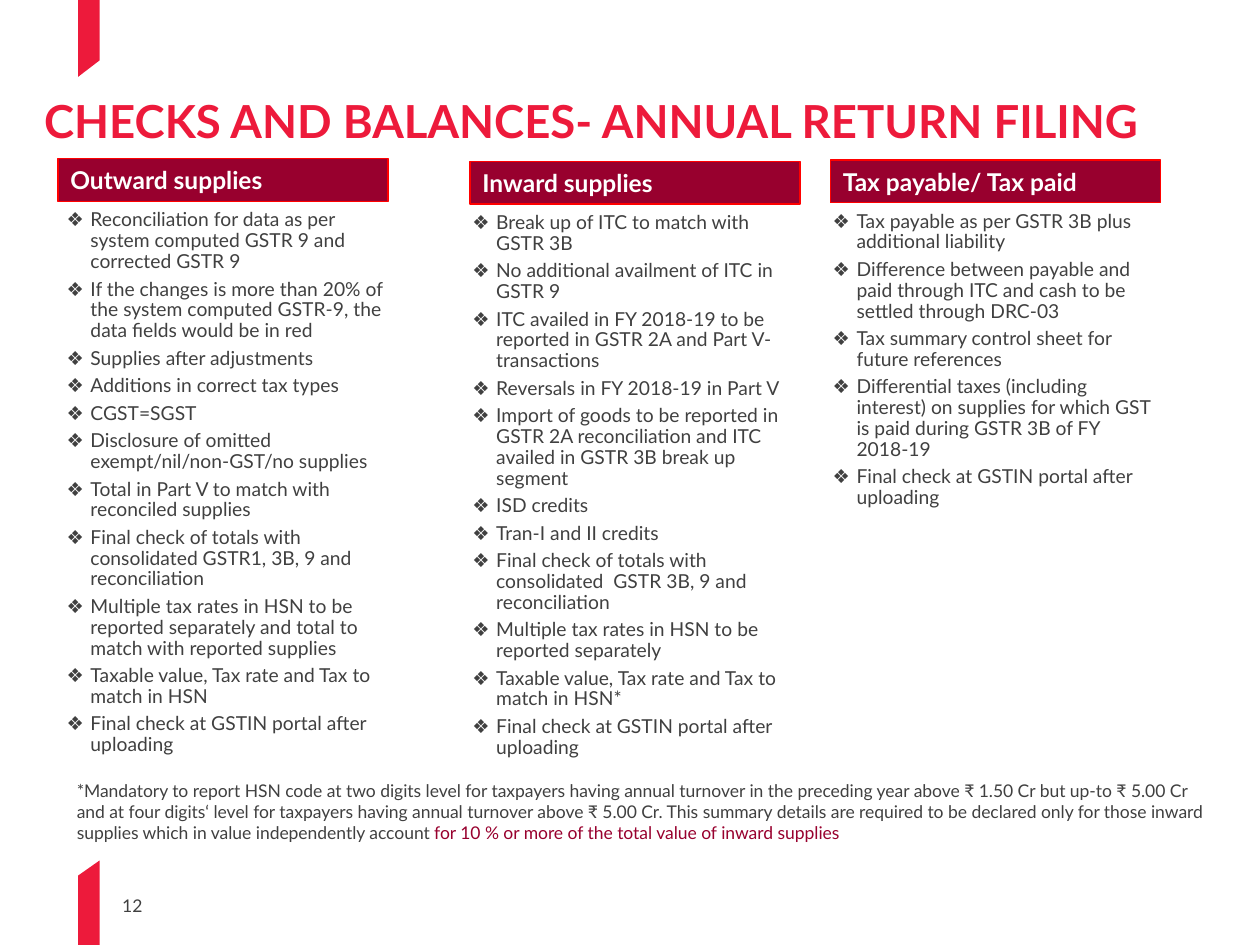
"""Build the annual return filing checklist slide."""
from lxml import etree
from pptx import Presentation
from pptx import util as u
from pptx.dml.color import RGBColor
from pptx.enum import shapes, text
from pptx.oxml.ns import qn

RED, WINE, GREY, WHITE = "ED1A3B", "98002E", "404040", "FFFFFF"
TITLE = "CHECKS AND BALANCES- ANNUAL RETURN FILING"
FINAL_CHECK = "Final check at GSTIN portal after uploading"

COLUMNS = [
    {"heading": "Outward supplies", "header_at": (0.46, 1.26), "list_left": 0.43, "list_height": 4.5,
     "checks": [
         "Reconciliation for data as per system computed GSTR 9 and corrected GSTR 9",
         "If the changes is more than 20% of the system computed GSTR-9, the data fields would be in red",
         "Supplies after adjustments",
         "Additions in correct tax types",
         "CGST=SGST",
         "Disclosure of omitted exempt/nil/non-GST/no supplies",
         "Total in Part V to match with reconciled supplies",
         "Final check of totals with consolidated GSTR1, 3B, 9 and reconciliation",
         "Multiple tax rates in HSN to be reported separately and total to match with reported supplies",
         "Taxable value, Tax rate and Tax to match in HSN",
         FINAL_CHECK]},
    {"heading": "Inward supplies", "header_at": (3.73, 1.28), "list_left": 3.65, "list_height": 4.5,
     "checks": [
         "Break up of ITC to match with GSTR 3B",
         "No additional availment of ITC in GSTR 9",
         "ITC availed in FY 2018-19 to be reported in GSTR 2A and Part V- transactions",
         "Reversals in FY 2018-19 in Part V",
         "Import of goods to be reported in GSTR 2A reconciliation and ITC availed in GSTR 3B "
         "break up segment",
         "ISD credits",
         "Tran-I and II credits",
         "Final check of totals with consolidated  GSTR 3B, 9 and reconciliation",
         "Multiple tax rates in HSN to be reported separately",
         "Taxable value, Tax rate and Tax to match in HSN*",
         FINAL_CHECK]},
    {"heading": "Tax payable/ Tax paid", "header_at": (6.59, 1.27), "list_left": 6.51, "list_height": 2.5,
     "checks": [
         "Tax payable as per GSTR 3B plus additional liability",
         "Difference between payable and paid through ITC and cash to be settled through DRC-03",
         "Tax summary control sheet for future references",
         "Differential taxes (including interest) on supplies for which GST is paid during GSTR 3B "
         "of FY 2018-19",
         FINAL_CHECK]},
]

FOOTNOTE = [
    ("*Mandatory to report HSN code at two digits level for taxpayers having annual turnover in the "
     "preceding year above ₹ 1.50 Cr but up-to ₹ 5.00 Cr and at four digits‘ level for taxpayers having "
     "annual turnover above ₹ 5.00 Cr. This summary details are required to be declared only for those "
     "inward supplies which in value independently account ", GREY),
    ("for 10 % or more of the total value of inward supplies", WINE),
]

RIBBONS = [
    [(0.79, 0.48), (0.79, 0), (0.62, 0), (0.62, 0.61)],
    [(0.62, 6.95), (0.62, 7.5), (0.79, 7.5), (0.79, 6.83)],
]


def rgb(value):
    return RGBColor.from_string(value)


def paint(shape, fill, line=None):
    shape.shadow.inherit = False
    shape.fill.solid()
    shape.fill.fore_color.rgb = rgb(fill)
    if line:
        shape.line.color.rgb = rgb(line)
        shape.line.width = u.Pt(0.75)
    else:
        shape.line.fill.background()


def add_bullet(para, indent=0.19):
    props = para._p.get_or_add_pPr()
    props.set("marL", str(u.Inches(indent)))
    props.set("indent", str(-u.Inches(indent)))
    etree.SubElement(props, qn("a:buFont")).set("typeface", "Lato")
    etree.SubElement(props, qn("a:buChar")).set("char", "❖")


def write(shape, paragraphs, size, color=GREY, bold=False, inset=True, bullets=False,
          spacing=None, after=None, anchor=text.MSO_ANCHOR.TOP):
    """Fill a shape with paragraphs, each a string or a list of (text, color) spans."""
    frame = shape.text_frame
    frame.word_wrap = True
    frame.auto_size = text.MSO_AUTO_SIZE.NONE
    frame.vertical_anchor = anchor
    if not inset:
        frame.margin_left = frame.margin_right = frame.margin_top = frame.margin_bottom = 0
    for index, content in enumerate(paragraphs):
        para = frame.add_paragraph() if index else frame.paragraphs[0]
        para.alignment = text.PP_ALIGN.LEFT
        if spacing:
            para.line_spacing = spacing
        if after:
            para.space_after = u.Pt(after)
        if bullets:
            add_bullet(para)
        spans = [(content, color)] if isinstance(content, str) else content
        for words, span_color in spans:
            span = para.add_run()
            span.text = words
            span.font.name = "Lato"
            span.font.size = u.Pt(size)
            span.font.bold = bold
            span.font.color.rgb = rgb(span_color)


def add_text(page, bounds, paragraphs, **style):
    box = page.shapes.add_textbox(*map(u.Inches, bounds))
    write(box, paragraphs, **style)


def add_ribbon(page, corners):
    start, *rest = [tuple(map(u.Inches, corner)) for corner in corners]
    builder = page.shapes.build_freeform(*start)
    builder.add_line_segments(rest, close=True)
    paint(builder.convert_to_shape(), RED)


def add_column(page, column):
    left, top = column["header_at"]
    header = page.shapes.add_shape(shapes.MSO_SHAPE.RECTANGLE,
                                   *map(u.Inches, (left, top, 2.62, 0.34)))
    paint(header, WINE, "FF0000")
    write(header, [column["heading"]], size=14, color=WHITE, bold=True,
          anchor=text.MSO_ANCHOR.MIDDLE)
    add_text(page, (column["list_left"], top + 0.36, 2.73, column["list_height"]),
             column["checks"], size=11, bullets=True, spacing=0.9, after=3.85)


def main():
    deck = Presentation()
    deck.slide_width, deck.slide_height = u.Inches(10), u.Inches(7.5)
    page = deck.slides.add_slide(deck.slide_layouts[5])
    for corners in RIBBONS:
        add_ribbon(page, corners)
    title = page.shapes.title
    title.left, title.top, title.width, title.height = map(u.Inches, (0.35, 0.82, 9.26, 0.35))
    write(title, [TITLE], size=26, color=RED, bold=True, inset=False, spacing=0.8)
    for column in COLUMNS:
        add_column(page, column)
    add_text(page, (0.61, 6.19, 8.96, 0.5), [FOOTNOTE], size=10, inset=False)
    add_text(page, (0.97, 7.1, 0.45, 0.17), ["12"], size=10, inset=False,
             anchor=text.MSO_ANCHOR.BOTTOM)
    deck.save("out.pptx")


if __name__ == "__main__":
    main()
